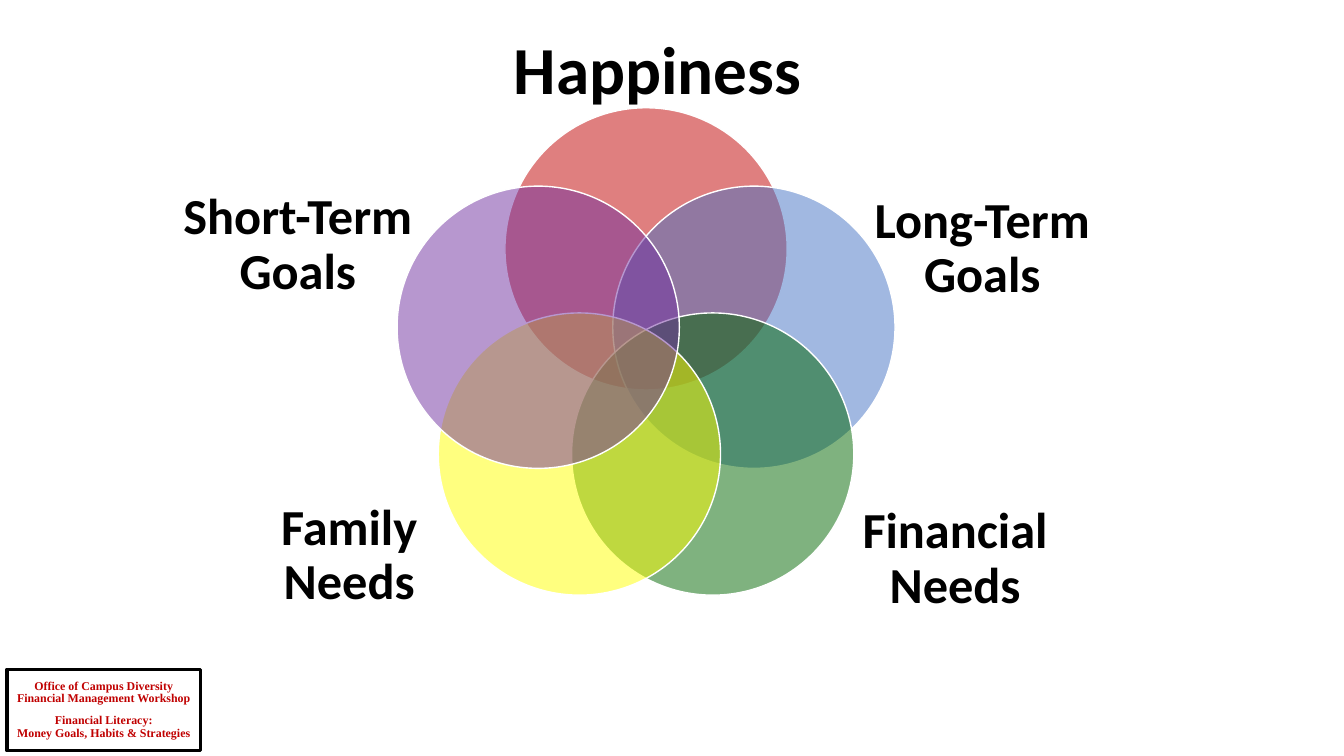
import math

import pptx
import pptx.dml.color
import pptx.enum.shapes
import pptx.enum.text
import pptx.oxml.ns
import pptx.util
from lxml import etree

Pt = pptx.util.Pt
RGBColor = pptx.dml.color.RGBColor
MSO_SHAPE = pptx.enum.shapes.MSO_SHAPE

BLACK = RGBColor(0x00, 0x00, 0x00)
WHITE = RGBColor(0xFF, 0xFF, 0xFF)
RED = RGBColor(0xC0, 0x00, 0x00)
BLUE = RGBColor(0x44, 0x72, 0xC4)
GREEN = RGBColor(0x00, 0x66, 0x00)
YELLOW = RGBColor(0xFF, 0xFF, 0x00)
PURPLE = RGBColor(0x70, 0x30, 0xA0)

VENN_X, VENN_Y = 461.5, 258.8
RING_RADIUS = 81
DIAMETER = 201.6


def write_text(shape, paragraphs, size, font="Calibri", color=BLACK, gap=0):
    """Fill a shape with bold centred paragraphs, gap points apart."""
    frame = shape.text_frame
    frame.word_wrap = True
    frame.vertical_anchor = pptx.enum.text.MSO_ANCHOR.MIDDLE
    frame.margin_left = frame.margin_right = 0
    frame.margin_top = frame.margin_bottom = 0
    for index, text in enumerate(paragraphs):
        paragraph = frame.add_paragraph() if index else frame.paragraphs[0]
        paragraph.text = text
        paragraph.alignment = pptx.enum.text.PP_ALIGN.CENTER
        paragraph.line_spacing = 0.9
        if index:
            paragraph.space_before = Pt(gap)
        paragraph.font.size = Pt(size)
        paragraph.font.name = font
        paragraph.font.bold = True
        paragraph.font.color.rgb = color


presentation = pptx.Presentation()
presentation.slide_width = Pt(960)
presentation.slide_height = Pt(540)
slide = presentation.slides.add_slide(presentation.slide_layouts[6])

# Workshop box
workshop_box = slide.shapes.add_shape(
    MSO_SHAPE.RECTANGLE, Pt(5), Pt(478), Pt(138.2), Pt(58.3))
workshop_box.shadow.inherit = False
workshop_box.fill.background()
workshop_box.line.color.rgb = BLACK
workshop_box.line.width = Pt(2.25)
write_text(
    workshop_box,
    ["Office of Campus Diversity\vFinancial Management Workshop",
     "Financial Literacy:\vMoney Goals, Habits & Strategies"],
    8.5, font="Times New Roman", color=RED, gap=6.5)

# Five circles clockwise from the top: label, colour, text size, label box
goals = [
    ("Happiness", RED, 48, (352.8, -15.8, 234, 135.4)),
    ("Long-Term Goals", BLUE, 36, (596.9, 104.4, 209.5, 146.9)),
    ("Financial Needs", GREEN, 36, (607, 326.2, 150.5, 146.9)),
    ("Family Needs", YELLOW, 36, (174.2, 324, 150.5, 146.9)),
    ("Short-Term Goals", PURPLE, 36, (108, 102.2, 209.5, 146.9)),
]
for index, (label, color, size, label_box) in enumerate(goals):
    angle = 2 * math.pi * index / len(goals)
    left = VENN_X + RING_RADIUS * math.sin(angle) - DIAMETER / 2
    top = VENN_Y - RING_RADIUS * math.cos(angle) - DIAMETER / 2
    circle = slide.shapes.add_shape(
        MSO_SHAPE.OVAL, Pt(left), Pt(top), Pt(DIAMETER), Pt(DIAMETER))
    circle.shadow.inherit = False
    circle.fill.solid()
    circle.fill.fore_color.rgb = color
    fill_color = circle.fill._xPr.find(".//" + pptx.oxml.ns.qn("a:srgbClr"))
    etree.SubElement(fill_color, pptx.oxml.ns.qn("a:alpha"), val="50000")
    circle.line.color.rgb = WHITE
    circle.line.width = Pt(1)
    label_shape = slide.shapes.add_textbox(*map(Pt, label_box))
    write_text(label_shape, [label], size)

presentation.save("out.pptx")
